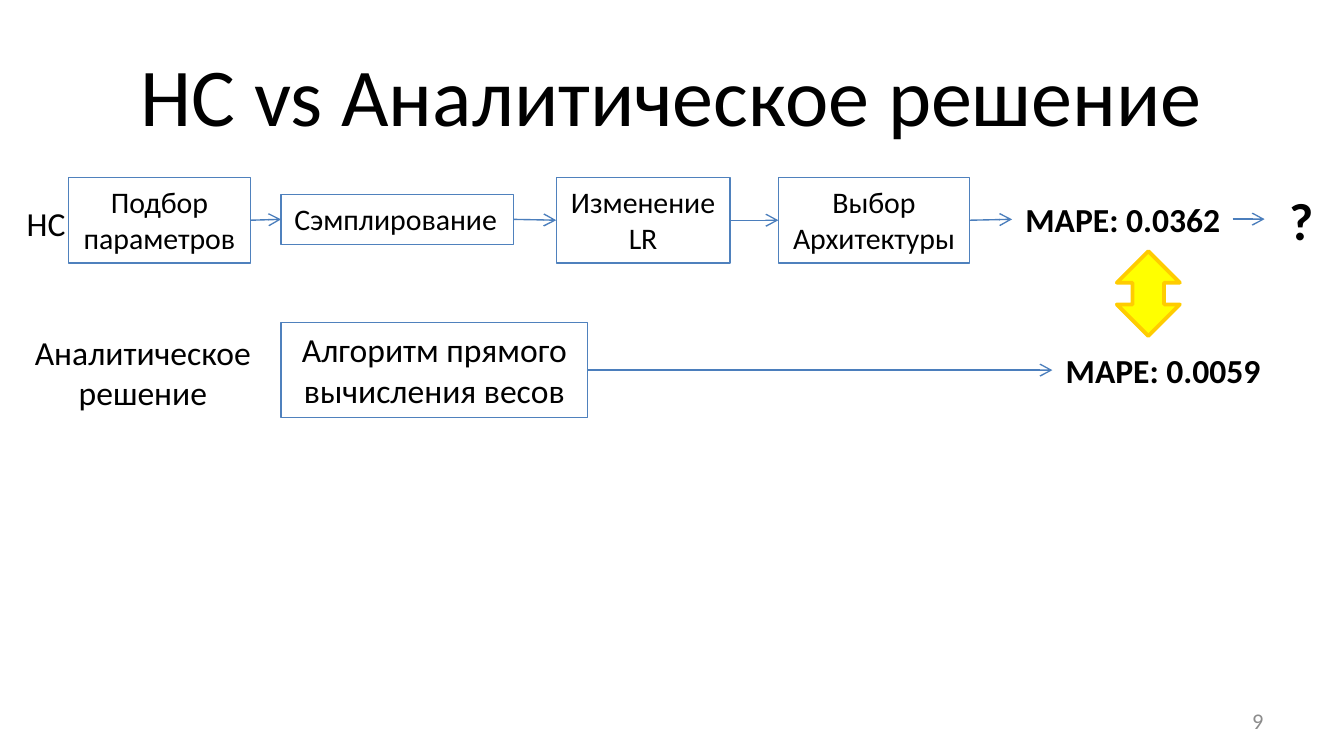
from itertools import pairwise

from lxml import etree
from pptx import Presentation
from pptx.dml.color import RGBColor
from pptx.enum.shapes import MSO_CONNECTOR as CONN, MSO_SHAPE as SHAPE
from pptx.enum.text import MSO_ANCHOR as ANCHOR, MSO_AUTO_SIZE as AUTO, PP_ALIGN as ALIGN
from pptx.oxml.ns import qn
from pptx.util import Pt

COLORS = {
    "text": "000000",
    "number": "8C8C8C",
    "box": "4F81BD",
    "arrow": "4B7EBC",
    "yellow": "FFFF00",
    "amber": "FFCC00",
}
FONT = "Calibri"
RIGHT, LEFT = 3, 1


def rgb(name):
    return RGBColor.from_string(COLORS[name])


def set_text(sp, text, size, align=ALIGN.LEFT, color="text", bold=False,
             wrap=False, anchor=ANCHOR.TOP, auto=AUTO.SHAPE_TO_FIT_TEXT):
    tf = sp.text_frame
    tf.text = text
    tf.word_wrap = wrap
    tf.auto_size = auto
    tf.vertical_anchor = anchor
    tf.margin_left = tf.margin_right = Pt(7.2)
    tf.margin_top = tf.margin_bottom = Pt(3.6)
    for p in tf.paragraphs:
        p.alignment = align
        for r in p.runs:
            r.font.name = FONT
            r.font.size = Pt(size)
            r.font.bold = bold
            r.font.color.rgb = rgb(color)


def add_label(s, at, text, size, **style):
    sp = s.shapes.add_textbox(*map(Pt, at))
    set_text(sp, text, size, **style)
    return sp


def add_box(s, at, text, size, align=ALIGN.CENTER):
    sp = s.shapes.add_shape(SHAPE.RECTANGLE, *map(Pt, at))
    sp.shadow.inherit = False
    sp.fill.background()
    sp.line.color.rgb = rgb("box")
    sp.line.width = Pt(0.75)
    set_text(sp, text, size, align=align)
    return sp


def add_arrow(s, x1=0, y1=0, x2=0, y2=0, source=None, target=None):
    line = s.shapes.add_connector(CONN.STRAIGHT, Pt(x1), Pt(y1), Pt(x2), Pt(y2))
    if source is not None:
        line.begin_connect(source, RIGHT)
    if target is not None:
        line.end_connect(target, LEFT)
    line.line.color.rgb = rgb("arrow")
    line.line.width = Pt(0.75)
    etree.SubElement(line.line._get_or_add_ln(), qn("a:tailEnd"), type="arrow")
    etree.SubElement(line._element.spPr, qn("a:effectLst"))


def add_double_arrow(s, at):
    sp = s.shapes.add_shape(SHAPE.UP_DOWN_ARROW, *map(Pt, at))
    sp.shadow.inherit = False
    sp.fill.solid()
    sp.fill.fore_color.rgb = rgb("yellow")
    sp.line.color.rgb = rgb("amber")
    sp.line.width = Pt(2)


def add_network_row(s):
    add_label(s, (7.2, 105.3, 35, 29), "НС", 18)
    steps = [
        add_box(s, (36.8, 95, 97.3, 46), "Подбор\nпараметров", 16),
        add_box(s, (150.6, 104.2, 124.6, 26.7), "Сэмплирование", 16, ALIGN.LEFT),
        add_box(s, (298, 95, 93, 46), "Изменение\nLR", 16),
        add_box(s, (417, 95, 102.5, 46), "Выбор\nАрхитектуры", 16),
        add_label(s, (542.2, 103, 130.3, 29), "MAPE: 0.0362", 18, bold=True, wrap=True),
    ]
    for source, target in pairwise(steps):
        add_arrow(s, source=source, target=target)
    add_arrow(s, 660.3, 117.4, 677.5, 117.4)
    add_label(s, (683.5, 97.2, 27.5, 41), "?", 28, bold=True)


def add_analytic_row(s):
    add_label(s, (8.6, 174.2, 136, 51), "Аналитическое\nрешение", 18, align=ALIGN.CENTER)
    algorithm = add_box(s, (150.6, 172.8, 164.2, 51), "Алгоритм прямого\nвычисления весов", 18)
    result = add_label(s, (563.8, 183.8, 130.3, 29), "MAPE: 0.0059", 18, bold=True, wrap=True)
    add_arrow(s, source=algorithm, target=result)


def main():
    prs = Presentation()
    prs.slide_width, prs.slide_height = Pt(720), Pt(405)
    s = prs.slides.add_slide(prs.slide_layouts[6])
    add_label(s, (36, 16.5, 648, 67.5), "НС vs Аналитическое решение", 44,
              align=ALIGN.CENTER, wrap=True, anchor=ANCHOR.MIDDLE, auto=AUTO.NONE)
    add_network_row(s)
    add_analytic_row(s)
    add_double_arrow(s, (598.3, 134.6, 33.8, 45.4))
    add_label(s, (516, 375.4, 168, 21.6), "9", 12, align=ALIGN.RIGHT, color="number",
              wrap=True, anchor=ANCHOR.MIDDLE, auto=AUTO.NONE)
    prs.save("out.pptx")


if __name__ == "__main__":
    main()
